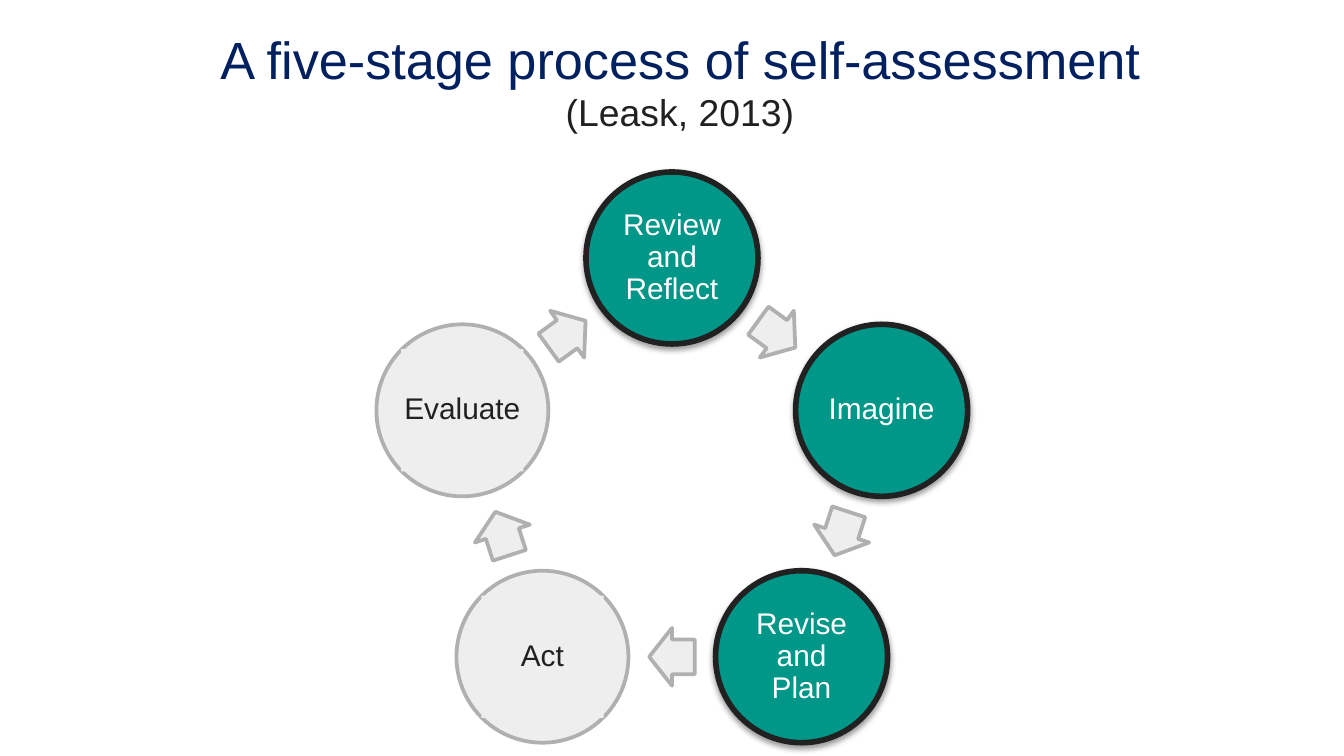
from math import cos, radians, sin
from typing import NamedTuple

from lxml import etree
from pptx import Presentation
from pptx.dml.color import RGBColor
from pptx.enum.shapes import MSO_SHAPE
from pptx.enum.text import MSO_ANCHOR, PP_ALIGN
from pptx.oxml.ns import qn
from pptx.util import Inches, Pt

OVAL, ARROW = MSO_SHAPE.OVAL, MSO_SHAPE.RIGHT_ARROW
TOP, MIDDLE, CENTER = MSO_ANCHOR.TOP, MSO_ANCHOR.MIDDLE, PP_ALIGN.CENTER

FONT = "Arial"
WHITE, INK, NAVY = "FFFFFF", "212121", "002060"
TEAL, PALE, GREY = "009688", "EEEEEE", "B0B0B0"

# Cycle geometry, in inches
CENTER_X, CENTER_Y, RADIUS = 5.0, 3.56, 1.64
CIRCLE, LABEL = 1.28, 0.91
ARROW_WIDTH, ARROW_HEIGHT = 0.34, 0.43


class Stage(NamedTuple):
    label: str
    active: bool


STAGES = [
    Stage("Review and Reflect", True),
    Stage("Imagine", True),
    Stage("Revise and Plan", True),
    Stage("Act", False),
    Stage("Evaluate", False),
]
STEP = 360 / len(STAGES)


def color(value: str) -> RGBColor:
    return RGBColor.from_string(value)


def paint(target, value: str) -> None:
    target.fill.solid()
    target.fill.fore_color.rgb = color(value)


def point(angle: float, radius: float) -> tuple[float, float]:
    """Position on the cycle, clockwise from the top."""
    turn = radians(angle)
    return CENTER_X + radius * sin(turn), CENTER_Y - radius * cos(turn)


def frame(x: float, y: float, width: float, height: float) -> list:
    """Left, top, width and height of a box centred on x, y."""
    return [Inches(v) for v in (x - width / 2, y - height / 2, width, height)]


def add_figure(page, kind, place: list, fill: str, line: str, weight: float):
    shape = page.shapes.add_shape(kind, *place)
    shape.shadow.inherit = False
    paint(shape, fill)
    shape.line.color.rgb = color(line)
    shape.line.width = Pt(weight)
    return shape


def add_shadow(shape) -> None:
    effects = shape._element.spPr.find(qn("a:effectLst"))
    shadow = etree.SubElement(effects, qn("a:outerShdw"), blurRad=str(Pt(3.1)),
                              dist=str(Pt(1.6)), dir="5400000", rotWithShape="0")
    black = etree.SubElement(shadow, qn("a:srgbClr"), val="000000")
    etree.SubElement(black, qn("a:alpha"), val="38000")


def add_text_box(page, place: list, inset: float, anchor):
    box = page.shapes.add_textbox(*place)
    text = box.text_frame
    margins = ("margin_left", "margin_top", "margin_right", "margin_bottom")
    settings = {"word_wrap": True, "vertical_anchor": anchor,
                **dict.fromkeys(margins, Inches(inset))}
    for name, value in settings.items():
        setattr(text, name, value)
    para = text.paragraphs[0]
    para.alignment = CENTER
    return box, para


def add_span(para, words: str, size: float, value: str) -> None:
    span = para.add_run()
    span.text = words
    for name, setting in {"name": FONT, "size": Pt(size)}.items():
        setattr(span.font, name, setting)
    span.font.color.rgb = color(value)


def add_stage(page, stage: Stage, angle: float) -> None:
    x, y = point(angle, RADIUS)
    fill, line, weight = (TEAL, INK, 3) if stage.active else (PALE, GREY, 2)
    circle = add_figure(page, OVAL, frame(x, y, CIRCLE, CIRCLE), fill, line, weight)
    box, para = add_text_box(page, frame(x, y, LABEL, LABEL), 0.02, MIDDLE)
    para.line_spacing = 0.9
    if stage.active:
        add_shadow(circle)
    else:
        paint(box, fill)
    add_span(para, stage.label, 16, WHITE if stage.active else INK)


def add_step_arrow(page, angle: float) -> None:
    x, y = point(angle, RADIUS * cos(radians(STEP / 2)))
    arrow = add_figure(page, ARROW, frame(x, y, ARROW_WIDTH, ARROW_HEIGHT), PALE, GREY, 2)
    arrow.adjustments[0], arrow.adjustments[1] = 0.6, 0.5
    arrow.rotation = angle


def main() -> None:
    deck = Presentation()
    # Widescreen, 16 by 9
    deck.slide_width = Inches(10)
    deck.slide_height = deck.slide_width * 9 // 16
    page = deck.slides.add_slide(deck.slide_layouts[6])
    paint(page.background, WHITE)

    # Title with its source
    place = [Inches(v) for v in (0.4, 0.1, 9.32, 0.63)]
    _, para = add_text_box(page, place, 0.1, TOP)
    add_span(para, "A five-stage process of self-assessment", 28, NAVY)
    para.add_line_break()
    add_span(para, "(Leask, 2013)", 20, INK)

    # Stages, each followed by the arrow to the next
    for index, stage in enumerate(STAGES):
        add_stage(page, stage, index * STEP)
        add_step_arrow(page, (index + 0.5) * STEP)

    deck.save("out.pptx")


if __name__ == "__main__":
    main()
